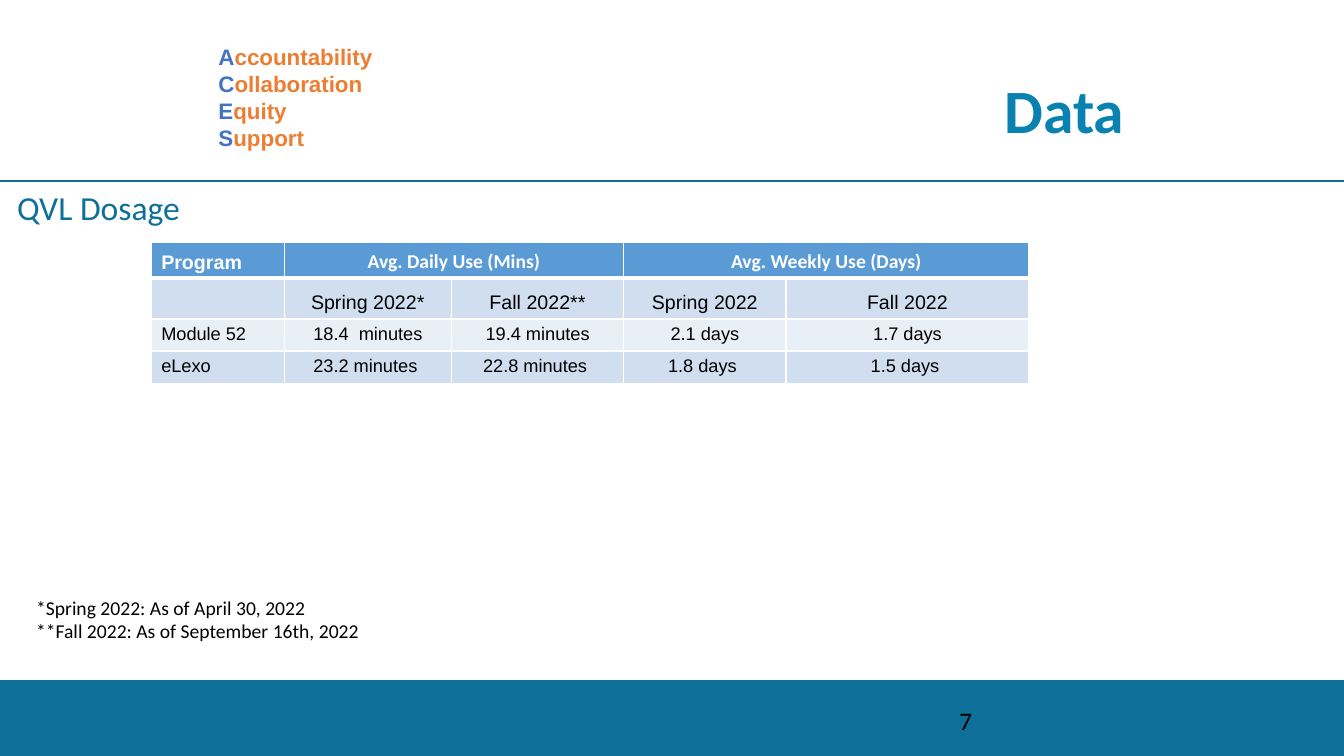
from dataclasses import dataclass

from lxml import etree
from pptx import Presentation
from pptx import util as u
from pptx.dml.color import RGBColor
from pptx.enum import shapes, text
from pptx.oxml import ns

Pt = u.Pt
LEFT, CENTER = text.PP_ALIGN.LEFT, text.PP_ALIGN.CENTER
TOP, MIDDLE, BOTTOM = (
    text.MSO_ANCHOR.TOP, text.MSO_ANCHOR.MIDDLE, text.MSO_ANCHOR.BOTTOM)


@dataclass(frozen=True)
class Theme:
    heading_font: str = "Calibri"
    table_font: str = "Arial"
    teal: str = "0E6F98"
    title: str = "0A82B1"
    initial: str = "4472C4"
    value: str = "ED7D31"
    header: str = "5B9BD5"
    band_dark: str = "D0DEEF"
    band_light: str = "E9EFF7"
    white: str = "FFFFFF"
    black: str = "000000"
    title_size: float = 44
    subtitle_size: float = 24
    number_size: float = 18
    values_size: float = 16
    header_size: float = 14
    note_size: float = 14
    data_size: float = 13


def rgb(value):
    return RGBColor.from_string(value)


def write_text(frame, lines, *, size, font, color, bold=False, align=LEFT,
               anchor=TOP, line_spacing=None):
    """Fill a frame; a line is a string or a list of (text, color) pairs."""
    frame.word_wrap = True
    frame.vertical_anchor = anchor
    for index, line in enumerate(lines):
        paragraph = frame.paragraphs[0] if index == 0 else frame.add_paragraph()
        paragraph.alignment = align
        paragraph.space_before = Pt(0)
        if line_spacing:
            paragraph.line_spacing = line_spacing
        for words, run_color in [(line, color)] if isinstance(line, str) else line:
            run = paragraph.add_run()
            run.text = words
            run.font.size = Pt(size)
            run.font.name = font
            run.font.bold = bold
            run.font.color.rgb = rgb(run_color)


def set_borders(cell, color, **widths):
    """Draw cell borders; widths are points by side: L, R, T, B."""
    properties = cell._tc.get_or_add_tcPr()
    for index, (side, width) in enumerate(widths.items()):
        line = etree.Element(ns.qn(f"a:ln{side}"), w=str(Pt(width)))
        fill = etree.SubElement(line, ns.qn("a:solidFill"))
        etree.SubElement(fill, ns.qn("a:srgbClr"), val=color)
        properties.insert(index, line)


class SlideBuilder:
    def __init__(self, slide, theme):
        self.slide = slide
        self.theme = theme

    def bar(self, left, top, width, height, color):
        shape = self.slide.shapes.add_shape(
            shapes.MSO_SHAPE.RECTANGLE, Pt(left), Pt(top), Pt(width), Pt(height))
        shape.shadow.inherit = False
        shape.fill.solid()
        shape.fill.fore_color.rgb = rgb(color)
        shape.line.color.rgb = rgb(color)
        shape.line.width = Pt(0.75)

    def rule(self, top, width, color):
        connector = self.slide.shapes.add_connector(
            shapes.MSO_CONNECTOR.STRAIGHT, Pt(0), Pt(top), Pt(width), Pt(top))
        connector.line.color.rgb = rgb(color)
        connector.line.width = Pt(1.5)
        etree.SubElement(connector._element.spPr, ns.qn("a:effectLst"))

    def placeholder(self, index, left, top, width, height, lines, **style):
        shape = self.slide.placeholders[index]
        shape.left, shape.top = Pt(left), Pt(top)
        shape.width, shape.height = Pt(width), Pt(height)
        shape.text_frame.auto_size = text.MSO_AUTO_SIZE.NONE
        write_text(shape.text_frame, lines, **style)
        for paragraph in shape.text_frame.paragraphs:
            properties = paragraph._p.get_or_add_pPr()
            properties.set("marL", "0")
            properties.set("indent", "0")
            etree.SubElement(properties, ns.qn("a:buNone"))

    def text_box(self, left, top, width, height, lines, *, inset=7.2, **style):
        box = self.slide.shapes.add_textbox(
            Pt(left), Pt(top), Pt(width), Pt(height))
        frame = box.text_frame
        frame.margin_top = frame.margin_bottom = Pt(inset)
        write_text(frame, lines, **style)

    def table(self, left, top, widths, heights, rows, merges):
        theme = self.theme
        table = self.slide.shapes.add_table(
            len(rows), len(widths), Pt(left), Pt(top),
            Pt(sum(widths)), Pt(sum(heights))).table
        for column, width in zip(table.columns, widths):
            column.width = Pt(width)
        for row, height in zip(table.rows, heights):
            row.height = Pt(height)
        for row, values in enumerate(rows):
            for column, value in enumerate(values):
                cell = table.cell(row, column)
                header = row == 0
                set_borders(cell, theme.white, L=1, R=1,
                            T=3 if row == 1 else 1, B=3 if header else 1)
                cell.fill.solid()
                cell.fill.fore_color.rgb = rgb(
                    theme.header if header
                    else theme.band_dark if row % 2 else theme.band_light)
                cell.vertical_anchor = BOTTOM if row < 2 else TOP
                if value:
                    write_text(
                        cell.text_frame, [value],
                        size=theme.header_size if row < 2 else theme.data_size,
                        font=theme.heading_font if header and column
                        else theme.table_font,
                        color=theme.white if header else theme.black,
                        bold=header, align=CENTER if column else LEFT,
                        anchor=cell.vertical_anchor)
        for row, first, last in merges:
            table.cell(row, first).merge(table.cell(row, last))


def main():
    theme = Theme()
    presentation = Presentation()
    presentation.slide_width, presentation.slide_height = Pt(960), Pt(540)
    slide = presentation.slides.add_slide(presentation.slide_layouts[1])
    builder = SlideBuilder(slide, theme)

    builder.bar(0, 486, 960, 54, theme.teal)
    builder.rule(129.6, 960, theme.teal)
    builder.placeholder(
        0, 612, 47.5, 306.7, 60.5, ["Data "], size=theme.title_size,
        font=theme.heading_font, color=theme.title, bold=True, align=CENTER,
        anchor=MIDDLE)
    builder.placeholder(
        1, 5, 133.2, 408, 41.8, ["QVL Dosage"], size=theme.subtitle_size,
        font=theme.heading_font, color=theme.teal, line_spacing=0.9)

    values = ["Accountability", "Collaboration", "Equity", "Support"]
    builder.text_box(
        149, 23.8, 285, 92,
        [[(word[0], theme.initial), (word[1:], theme.value)] for word in values],
        size=theme.values_size, font=theme.table_font, color=theme.value,
        bold=True)
    builder.text_box(
        678.2, 500.4, 216, 28.8, ["7"], inset=3.6, size=theme.number_size,
        font=theme.heading_font, color=theme.black, anchor=MIDDLE)

    builder.table(
        108, 172.8,
        widths=[95, 119.5, 123, 116, 173.5],
        heights=[26, 29, 23, 23],
        rows=[
            ["Program", "Avg. Daily Use (Mins)", "", "Avg. Weekly Use (Days)", ""],
            ["", "Spring 2022*", "Fall 2022**", "Spring 2022", "Fall 2022"],
            ["Module 52", "18.4  minutes", "19.4 minutes", "2.1 days", "1.7 days"],
            ["eLexo", "23.2 minutes ", "22.8 minutes ", "1.8 days ", "1.5 days "],
        ],
        merges=[(0, 1, 2), (0, 3, 4)])

    builder.text_box(
        18.7, 418.3, 377.3, 65.5,
        ["*Spring 2022: As of April 30, 2022",
         "**Fall 2022: As of September 16th, 2022"],
        size=theme.note_size, font=theme.heading_font, color=theme.black)

    presentation.save("out.pptx")


if __name__ == "__main__":
    main()
